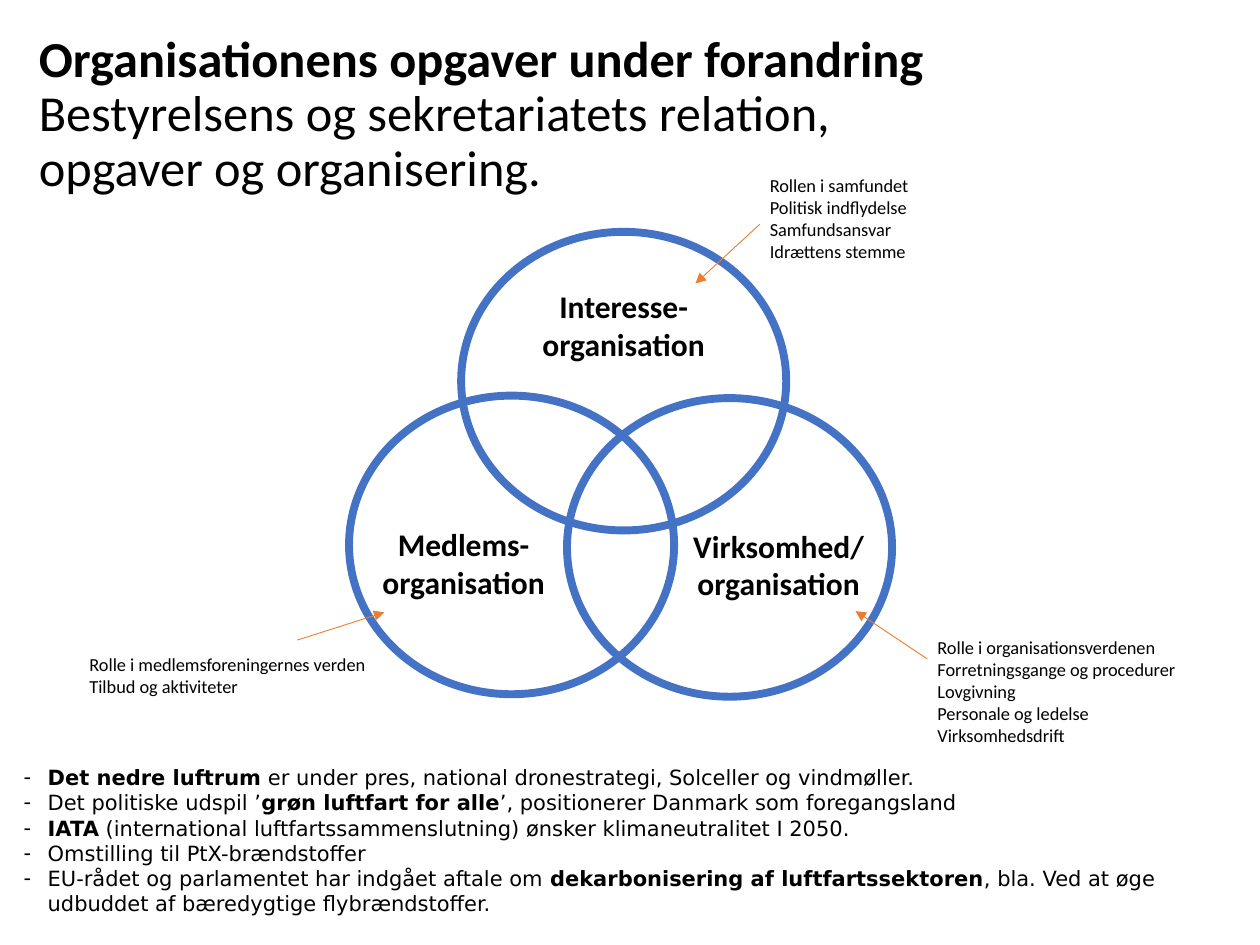
from typing import NamedTuple

from lxml.etree import SubElement
from pptx import Presentation
from pptx.dml.color import RGBColor
from pptx.enum.shapes import MSO_CONNECTOR, MSO_SHAPE
from pptx.enum.text import MSO_ANCHOR, PP_ALIGN
from pptx.oxml.ns import qn
from pptx.util import Inches, Pt

BLACK = RGBColor(0x00, 0x00, 0x00)
BLUE = RGBColor(0x44, 0x72, 0xC4)
ORANGE = RGBColor(0xED, 0x7D, 0x31)
BODY_FONT = "Calibri"
NEWS_FONT = "DejaVu Sans"

SLIDE_WIDTH, SLIDE_HEIGHT = Inches(10), Inches(7.5)
COLUMNS = 100
UNIT = SLIDE_WIDTH // COLUMNS


class Box(NamedTuple):
    left: float
    top: float
    width: float
    height: float

    def inner(self, dx, dy, width, height):
        return Box(self.left + dx, self.top + dy, width, height)

    def emu(self):
        return [round(value * UNIT) for value in self]


def style_run(run, size, font=BODY_FONT, bold=False):
    run.font.size = Pt(size)
    run.font.name = font
    run.font.bold = bold
    run.font.color.rgb = BLACK


def add_text(shapes, box, text, size, bold=False, align=PP_ALIGN.LEFT, inset=0):
    frame = shapes.add_textbox(*box.emu()).text_frame
    frame.word_wrap = True
    frame.margin_left = frame.margin_right = inset
    frame.margin_top = frame.margin_bottom = inset // 2
    frame.text = text
    for paragraph in frame.paragraphs:
        paragraph.alignment = align
        for run in paragraph.runs:
            style_run(run, size, bold=bold)
    return frame


def add_heading(slide, box, headline, subtitle):
    frame = add_text(slide.shapes, box, f"{headline}\v{subtitle}", 28.8, inset=Inches(0.1))
    frame.vertical_anchor = MSO_ANCHOR.MIDDLE
    frame.paragraphs[0].line_spacing = 0.9
    frame.paragraphs[0].runs[0].font.bold = True


def add_venn(slide, box, roles):
    group = slide.shapes.add_group_shape()
    for (dx, dy), _, _ in roles:
        circle = group.shapes.add_shape(MSO_SHAPE.OVAL, *box.inner(dx, dy, 25.8, 23.7).emu())
        circle.shadow.inherit = False
        circle.fill.background()
        circle.line.color.rgb = BLUE
        circle.line.width = Pt(4.5)
    for (dx, dy), (label_dx, label_dy), label in roles:
        label_box = box.inner(dx + label_dx, dy + label_dy, 27, 7.9)
        add_text(group.shapes, label_box, label, 18, True, PP_ALIGN.CENTER)


def add_callout(slide, box, lines, arrow_start, arrow_end):
    add_text(slide.shapes, box, "\n".join(lines), 10.5)
    ends = [round((origin + offset) * UNIT)
            for point in (arrow_start, arrow_end)
            for origin, offset in zip(box[:2], point)]
    arrow = slide.shapes.add_connector(MSO_CONNECTOR.STRAIGHT, *ends)
    arrow.line.color.rgb = ORANGE
    arrow.line.width = Pt(0.5)
    SubElement(arrow.line._get_or_add_ln(), qn("a:tailEnd"), type="triangle")
    SubElement(arrow._element.spPr, qn("a:effectLst"))


def add_news(slide, box, items):
    frame = add_text(slide.shapes, box, "", 12, inset=Inches(0.1))
    for index, item in enumerate(items):
        paragraph = frame.add_paragraph() if index else frame.paragraphs[0]
        properties = paragraph._p.get_or_add_pPr()
        properties.set("marL", str(Inches(0.19)))
        properties.set("indent", str(-Inches(0.19)))
        SubElement(properties, qn("a:buFont"), typeface=NEWS_FONT)
        SubElement(properties, qn("a:buChar"), char="-")
        for part, words in enumerate(item.split("**")):
            if words:
                run = paragraph.add_run()
                run.text = words
                style_run(run, 12, NEWS_FONT, bold=part % 2 == 1)


ROLES = [
    ((0, 13), (-4.4, 10.3), "Medlems-\vorganisation"),
    ((8.9, 0), (-0.6, 4.4), "Interesse-\vorganisation"),
    ((17.3, 13.2), (3.3, 10.2), "Virksomhed/\vorganisation"),
]

CALLOUTS = [
    (Box(61.1, 13.8, 12.1, 7.1),
     ["Rollen i samfundet", "Politisk indflydelse", "Samfundsansvar", "Idrættens stemme"],
     (-0.8, 4), (-5.9, 8.7)),
    (Box(74.4, 50.5, 21.1, 8.8),
     ["Rolle i organisationsverdenen", "Forretningsgange og procedurer", "Lovgivning",
      "Personale og ledelse", "Virksomhedsdrift"],
     (-0.8, 1.8), (-6.5, -2)),
    (Box(7.1, 51.8, 23.9, 5.8),
     ["Rolle i medlemsforeningernes verden", "Tilbud og aktiviteter"],
     (16.5, -1), (23.4, -3.2)),
]

NEWS = [
    "**Det nedre luftrum** er under pres, national dronestrategi, Solceller og vindmøller.",
    "Det politiske udspil ’**grøn luftfart for alle**’, positionerer Danmark som foregangsland",
    "**IATA** (international luftfartssammenslutning) ønsker klimaneutralitet I 2050.",
    "Omstilling til PtX-brændstoffer",
    "EU-rådet og parlamentet har indgået aftale om **dekarbonisering af luftfartssektoren**, "
    "bla. Ved at øge udbuddet af bæredygtige flybrændstoffer.",
]


def main():
    presentation = Presentation()
    presentation.slide_width, presentation.slide_height = SLIDE_WIDTH, SLIDE_HEIGHT
    slide = presentation.slides.add_slide(presentation.slide_layouts[6])
    add_heading(slide, Box(2.1, 1.9, 78, 14.5), "Organisationens opgaver under forandring",
                "Bestyrelsens og sekretariatets relation, opgaver og organisering.")
    add_venn(slide, Box(27.7, 18.4, 43.1, 36.9), ROLES)
    for callout in CALLOUTS:
        add_callout(slide, *callout)
    add_news(slide, Box(0.9, 60.2, 98.3, 13.1), NEWS)
    presentation.save("out.pptx")


if __name__ == "__main__":
    main()
